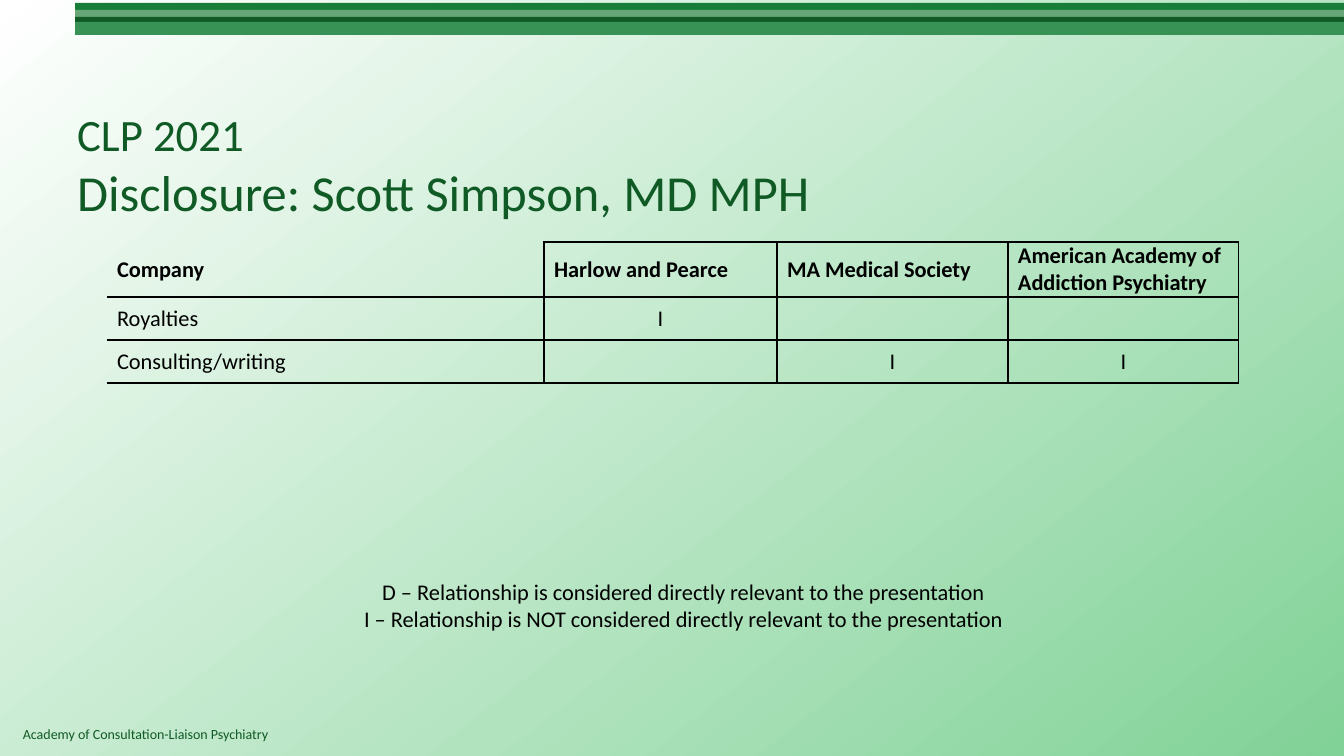
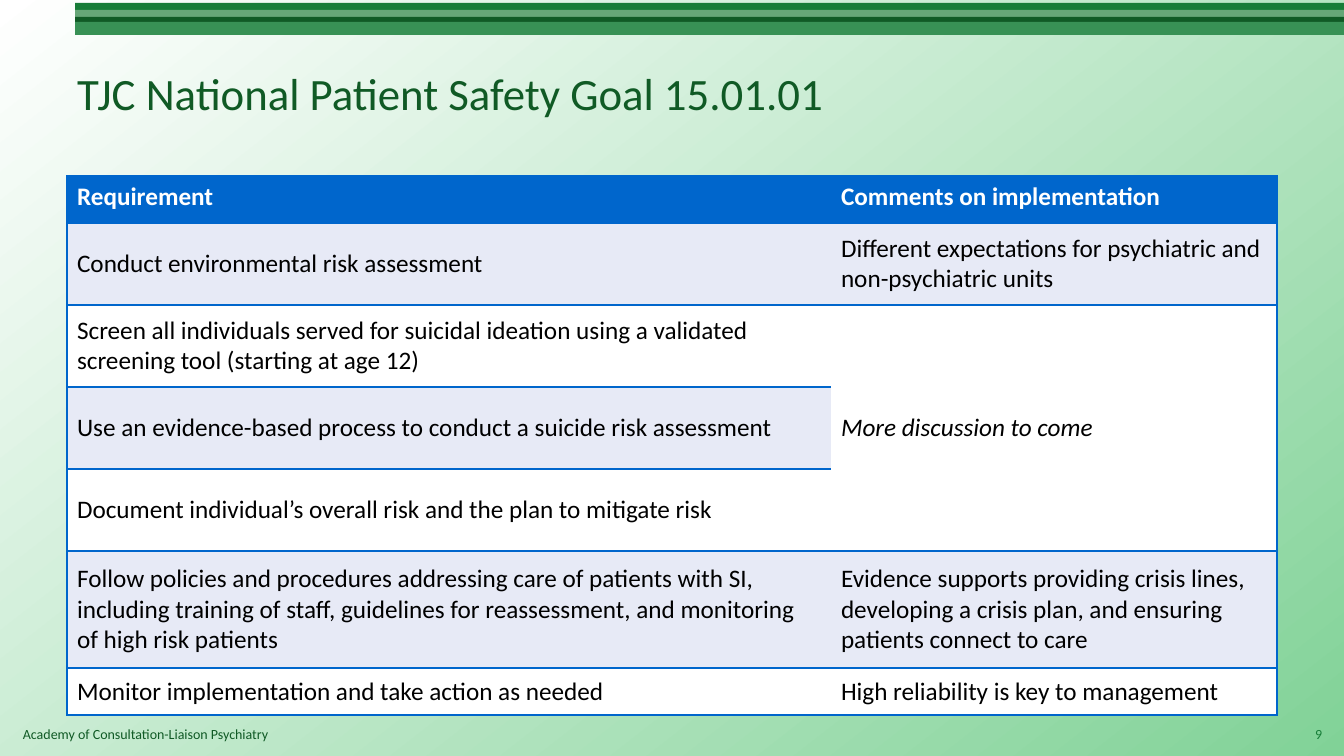
from lxml import etree
from pptx import Presentation
from pptx.dml.color import RGBColor
from pptx.enum.shapes import MSO_SHAPE
from pptx.enum.text import MSO_ANCHOR, PP_ALIGN
from pptx.oxml.ns import qn
from pptx.util import Emu, Pt

RECTANGLE = MSO_SHAPE.RECTANGLE
TOP, MIDDLE = MSO_ANCHOR.TOP, MSO_ANCHOR.MIDDLE
LEFT, CENTER, RIGHT = PP_ALIGN.LEFT, PP_ALIGN.CENTER, PP_ALIGN.RIGHT

WIDTH, HEIGHT = 1344, 756
SCALE = 12192000 / WIDTH
FONT = "Calibri"
BLACK, WHITE = "000000", "FFFFFF"
DARK_GREEN, GREEN, PALE_GREEN = "105A25", "177D38", "81D297"
BLUE, PALE_BLUE = "0066CC", "E7EAF6"
NO_STYLE = "{2D5ABB26-0587-4C30-8999-92F81FD0307C}"


def px(*lengths):
    return [Emu(round(length * SCALE)) for length in lengths]


def format_text(frame, size, color, align=LEFT, bold=False, italic=False):
    frame.word_wrap = True
    for para in frame.paragraphs:
        para.alignment = align
        for span in para.runs:
            span.font.name = FONT
            span.font.size = Pt(size)
            span.font.bold = bold
            span.font.italic = italic
            span.font.color.rgb = RGBColor.from_string(color)


deck = Presentation()
deck.slide_width, deck.slide_height = px(WIDTH, HEIGHT)
master = deck.slide_master
layout = deck.slide_layouts.get_by_name("Title Only")

background = master.background.fill
background.gradient()
background.gradient_angle = 308
for stop, color in zip(background.gradient_stops, (WHITE, PALE_GREEN)):
    stop.color.rgb = RGBColor.from_string(color)

disclosure = deck.slides.add_slide(layout)
safety_goal = deck.slides.add_slide(layout)

shared_shapes = []
for top, height, color in ((3, 7, GREEN), (10, 7, "66A677"), (17, 5, DARK_GREEN), (22, 13, "389155")):
    band = disclosure.shapes.add_shape(RECTANGLE, *px(75, top, WIDTH - 75, height))
    band.shadow.inherit = False
    band.fill.solid()
    band.fill.fore_color.rgb = RGBColor.from_string(color)
    band.line.fill.background()
    shared_shapes.append(band)

footer = disclosure.shapes.add_textbox(*px(13, 721, 932, 27))
footer.text_frame.text = "Academy of Consultation-Liaison Psychiatry"
format_text(footer.text_frame, 10, DARK_GREEN)
shared_shapes.append(footer)

for number, shape in enumerate(shared_shapes, start=100):
    shape._element.nvSpPr.cNvPr.id = number
    master.shapes._spTree.append(shape._element)

for page, top, text in (
    (disclosure, 101, "CLP 2021\vDisclosure: Scott Simpson, MD MPH"),
    (safety_goal, 30, "TJC National Patient Safety Goal 15.01.01"),
):
    title = page.shapes.title
    title.left, title.top, title.width, title.height = px(67, top, 1210, 126)
    title.text_frame.text = text
    title.text_frame.vertical_anchor = MIDDLE
    format_text(title.text_frame, 32, DARK_GREEN)
disclosure.shapes.title.text_frame.paragraphs[0].runs[1].font.size = Pt(36)

disclosure_rows = [
    ["Company", "Harlow and Pearce", "MA Medical Society", "American Academy of Addiction Psychiatry"],
    ["Royalties", "I", "", ""],
    ["Consulting/writing", "", "I", "I"],
]
goal_rows = [
    ["Requirement", "Comments on implementation"],
    ["Conduct environmental risk assessment",
     "Different expectations for psychiatric and non-psychiatric units"],
    ["Screen all individuals served for suicidal ideation using a validated screening tool (starting at age 12)",
     "More discussion to come"],
    ["Use an evidence-based process to conduct a suicide risk assessment", ""],
    ["Document individual’s overall risk and the plan to mitigate risk", ""],
    ["Follow policies and procedures addressing care of patients with SI, including training of staff, "
     "guidelines for reassessment, and monitoring of high risk patients",
     "Evidence supports providing crisis lines, developing a crisis plan, and ensuring patients connect to care"],
    ["Monitor implementation and take action as needed", "High reliability is key to management"],
]

tables = []
for page, left, top, columns, heights, rows, size, line_color in (
    (disclosure, 107, 242, [437, 233, 231, 231], [55, 43, 43], disclosure_rows, 16, BLACK),
    (safety_goal, 67, 176, [764, 446], [47, 82, 82, 82, 82, 117, 47], goal_rows, 18, BLUE),
):
    frame = page.shapes.add_table(len(rows), len(columns), *px(left, top, sum(columns), sum(heights)))
    table = frame.table
    tables.append(table)
    table._tbl.tblPr.find(qn("a:tableStyleId")).text = NO_STYLE
    for column, width in zip(table.columns, px(*columns)):
        column.width = width
    for row, height in zip(table.rows, px(*heights)):
        row.height = height
    on_disclosure = page is disclosure
    for row_index, texts in enumerate(rows):
        for column_index, text in enumerate(texts):
            cell = table.cell(row_index, column_index)
            header = row_index == 0
            first = column_index == 0
            cell.text_frame.text = text
            if on_disclosure:
                cell.margin_top = cell.margin_bottom = 0
                sides = ("RB" if header else "RTB") if first else "LRTB"
            else:
                sides = "LTB" if first else "RTB"
            cell.vertical_anchor = TOP if header and not on_disclosure else MIDDLE
            format_text(
                cell.text_frame,
                size,
                WHITE if header and not on_disclosure else BLACK,
                align=CENTER if text == "I" else LEFT,
                bold=header,
                italic=text == "More discussion to come",
            )
            properties = cell._tc.get_or_add_tcPr()
            for side in sides:
                border = etree.SubElement(properties, qn(f"a:ln{side}"), w=str(Pt(1)))
                paint = etree.SubElement(border, qn("a:solidFill"))
                etree.SubElement(paint, qn("a:srgbClr"), val=line_color)
            if on_disclosure:
                cell.fill.background()
            else:
                merged = not first and 2 <= row_index <= 4
                striped = row_index % 2 == 1 and not merged
                fill_color = BLUE if header else PALE_BLUE if striped else WHITE
                cell.fill.solid()
                cell.fill.fore_color.rgb = RGBColor.from_string(fill_color)

goal_table = tables[1]
goal_table.cell(2, 1).merge(goal_table.cell(4, 1))

legend = disclosure.shapes.add_textbox(*px(90, 573, 1187, 65))
legend.text_frame.text = (
    "D – Relationship is considered directly relevant to the presentation\n"
    "I – Relationship is NOT considered directly relevant to the presentation"
)
format_text(legend.text_frame, 16, BLACK, align=CENTER)

page_number = safety_goal.shapes.add_textbox(*px(1279, 714, 53, 40))
page_number.text_frame.text = "9"
page_number.text_frame.vertical_anchor = MIDDLE
format_text(page_number.text_frame, 10, GREEN, align=RIGHT)

deck.save("out.pptx")
